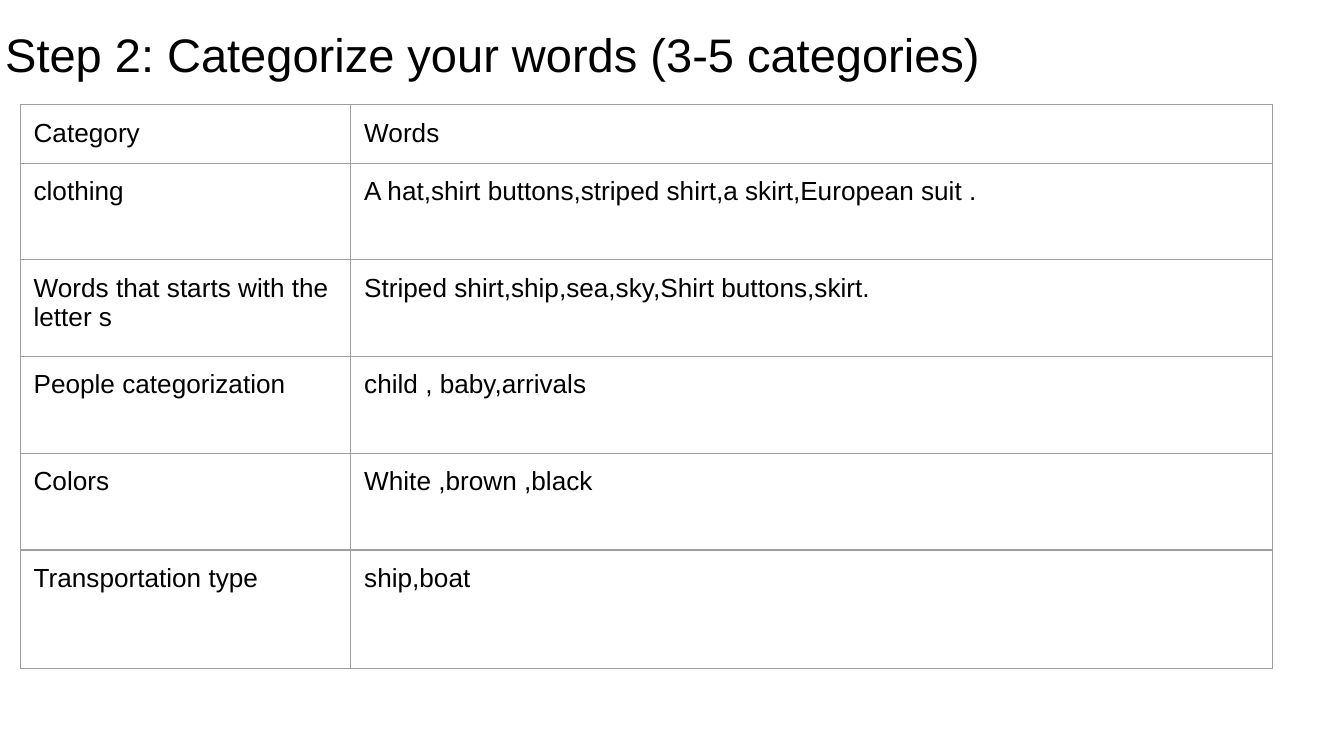
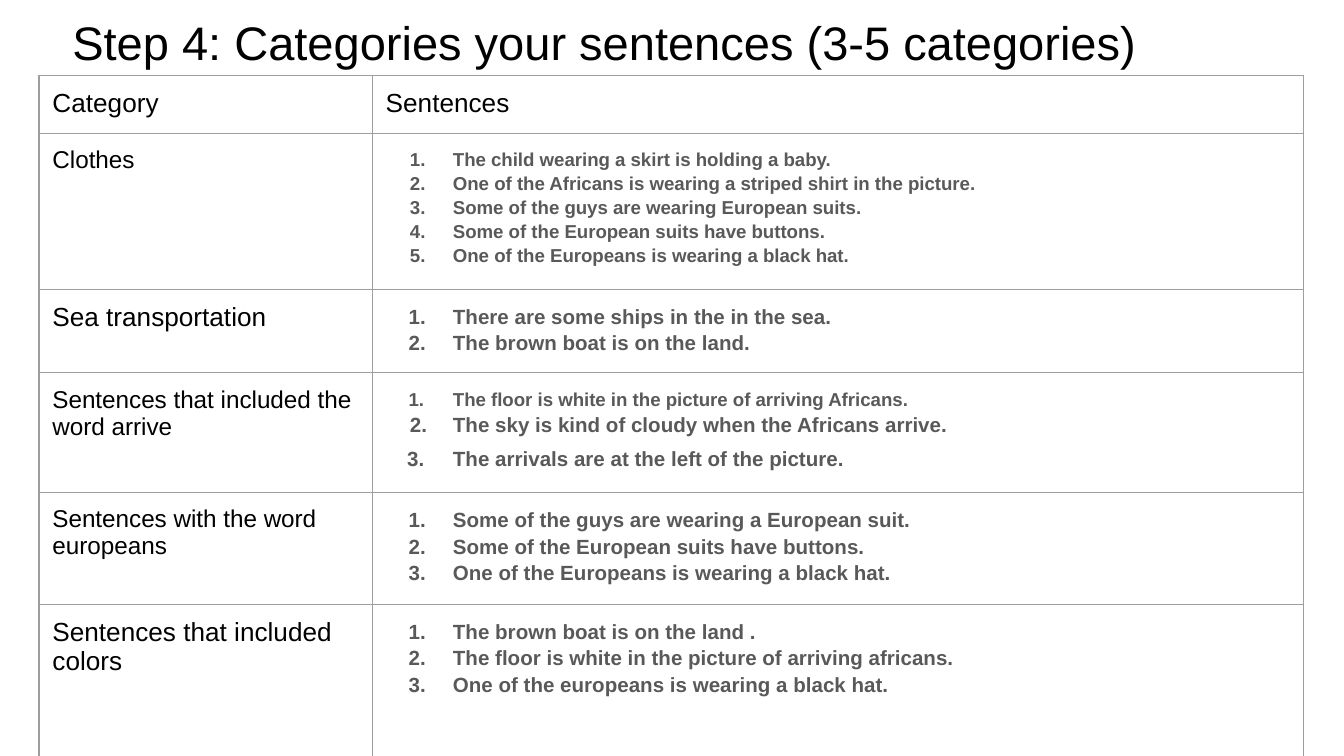
from lxml import etree
from pptx import Presentation
from pptx.dml.color import RGBColor
from pptx.enum.text import MSO_ANCHOR
from pptx.oxml.ns import qn
from pptx.util import Inches, Pt

TOP = MSO_ANCHOR.TOP
COLORS = {"bg": "FFFFFF", "text": "000000", "sentence": "595959", "border": "9E9E9E"}
FONT = "Arial"
INSET = 0.1


def rgb(name):
    return RGBColor.from_string(COLORS[name])


def label(text, size=14):
    """A cell with one plain paragraph."""
    return [([(text, size)], None)]


def numbered(size, hang, *sentences):
    """Numbered paragraphs that share a size and a hanging indent."""
    return [([(text, size)], hang) for text in sentences]


class Deck:
    def __init__(self):
        self.prs = Presentation()
        self.prs.slide_width = Inches(10)
        self.prs.slide_height = Inches(10) * 9 // 16
        self.s = None

    def slide(self):
        self.s = self.prs.slides.add_slide(self.prs.slide_layouts[6])
        fill = self.s.background.fill
        fill.solid()
        fill.fore_color.rgb = rgb("bg")

    def typefaces(self, rPr):
        for script in ("ea", "cs"):
            etree.SubElement(rPr, qn(f"a:{script}"), typeface=FONT)

    def run(self, p, text, size, color="text", bold=False):
        r = p.add_run()
        r.text = text
        r.font.name, r.font.size, r.font.bold = FONT, Pt(size), bold
        r.font.color.rgb = rgb(color)
        self.typefaces(r.font._element)

    def end(self, p, size):
        """Give the paragraph mark the font of its text, so rows keep their height."""
        rPr = etree.SubElement(p._p, qn("a:endParaRPr"), sz=str(int(size * 100)))
        etree.SubElement(rPr, qn("a:latin"), typeface=FONT)
        self.typefaces(rPr)

    def insets(self, box):
        box.margin_left = box.margin_right = Inches(INSET)
        box.margin_top = box.margin_bottom = Inches(INSET)
        box.vertical_anchor = TOP

    def title(self, text, left, top):
        sp = self.s.shapes.add_textbox(Inches(left), Inches(top), Inches(9.32), Inches(0.63))
        tf = sp.text_frame
        tf.word_wrap = True
        self.insets(tf)
        self.run(tf.paragraphs[0], text, 25.2)

    def number(self, p, hang):
        p.line_spacing = 1.15
        pPr = p._p.get_or_add_pPr()
        pPr.set("marL", str(Inches(0.5)))
        pPr.set("indent", str(-Inches(hang)))
        clr = etree.SubElement(pPr, qn("a:buClr"))
        etree.SubElement(clr, qn("a:srgbClr"), val=COLORS["sentence"])
        etree.SubElement(pPr, qn("a:buFont"), typeface=FONT)
        etree.SubElement(pPr, qn("a:buAutoNum"), type="arabicPeriod")

    def border(self, cell):
        tcPr = cell._tc.get_or_add_tcPr()
        for side in ("lnL", "lnR", "lnT", "lnB"):
            ln = etree.SubElement(tcPr, qn(f"a:{side}"), w=str(Pt(0.75)))
            fill = etree.SubElement(ln, qn("a:solidFill"))
            etree.SubElement(fill, qn("a:srgbClr"), val=COLORS["border"])

    def cell(self, cell, paragraphs):
        self.insets(cell)
        self.border(cell)
        cell.fill.background()
        tf = cell.text_frame
        for i, (runs, hang) in enumerate(paragraphs):
            p = tf.add_paragraph() if i else tf.paragraphs[0]
            if hang:
                self.number(p, hang)
            for text, size in runs:
                self.run(p, text, size, "sentence" if hang else "text", bool(hang))
            self.end(p, runs[-1][1])

    def table(self, left, top, widths, heights, rows):
        tbl = self.s.shapes.add_table(
            len(rows), len(widths), Inches(left), Inches(top),
            Inches(sum(widths)), Inches(sum(heights))).table
        tbl.first_row = tbl.horz_banding = False
        for col, width in zip(tbl.columns, widths):
            col.width = Inches(width)
        for i, (height, row) in enumerate(zip(heights, rows)):
            tbl.rows[i].height = Inches(height)
            for j, paragraphs in enumerate(row):
                self.cell(tbl.cell(i, j), paragraphs)


WORDS = [
    ("Category", "Words"),
    ("clothing", "A hat,shirt buttons,striped shirt,a skirt,European suit ."),
    ("Words that starts with the letter s", "Striped shirt,ship,sea,sky,Shirt buttons,skirt."),
    ("People categorization", "child , baby,arrivals"),
    ("Colors", "White ,brown ,black"),
    ("Transportation type", "ship,boat"),
]

SENTENCES = [
    (label("Category"), label("Sentences")),
    (label("Clothes", 13), numbered(
        10, 0.32,
        "The child wearing a skirt is holding a baby.",
        "One of the Africans is wearing a striped shirt in the picture.",
        "Some of the guys are wearing European suits.",
        "Some of the European suits have buttons.",
        "One of the Europeans is wearing a black hat.")),
    (label("Sea transportation"), numbered(
        11, 0.33,
        "There are some ships in the in the sea.",
        "The brown boat is on the land.")),
    (label("Sentences that included the word arrive", 13),
     numbered(10, 0.33, "The floor is white in the picture of arriving Africans.")
     + numbered(11, 0.32, "The sky is kind of cloudy when the Africans arrive.")
     + [([("The arrivals are at the left of the picture.", 11), (" ", 15)], 0.34)]),
    (label("Sentences with the word europeans", 13), numbered(
        11, 0.33,
        "Some of the guys are wearing a European suit.",
        "Some of the European suits have buttons.",
        "One of the Europeans is wearing a black hat.")),
    (label("Sentences that included colors"), numbered(
        11, 0.33,
        "The brown boat is on the land .",
        "The floor is white in the picture of arriving africans.",
        "One of the europeans is wearing a black hat.")),
]


def main():
    deck = Deck()

    # Step 2: words by category
    deck.slide()
    deck.title("Step 2: Categorize your words (3-5 categories)", -0.06, 0.09)
    deck.table(0.15, 0.78, [2.46, 6.86], [0.4] + [0.72] * 4 + [0.88],
               [[label(text) for text in row] for row in WORDS])

    # Step 4: sentences by category
    deck.slide()
    deck.title("Step 4: Categories your sentences (3-5 categories)", 0.44, 0)
    deck.table(0.29, 0.56, [2.48, 6.93], [0.43, 1.12, 0.59, 0.88, 0.79, 1.28], SENTENCES)

    deck.prs.save("out.pptx")


if __name__ == "__main__":
    main()
